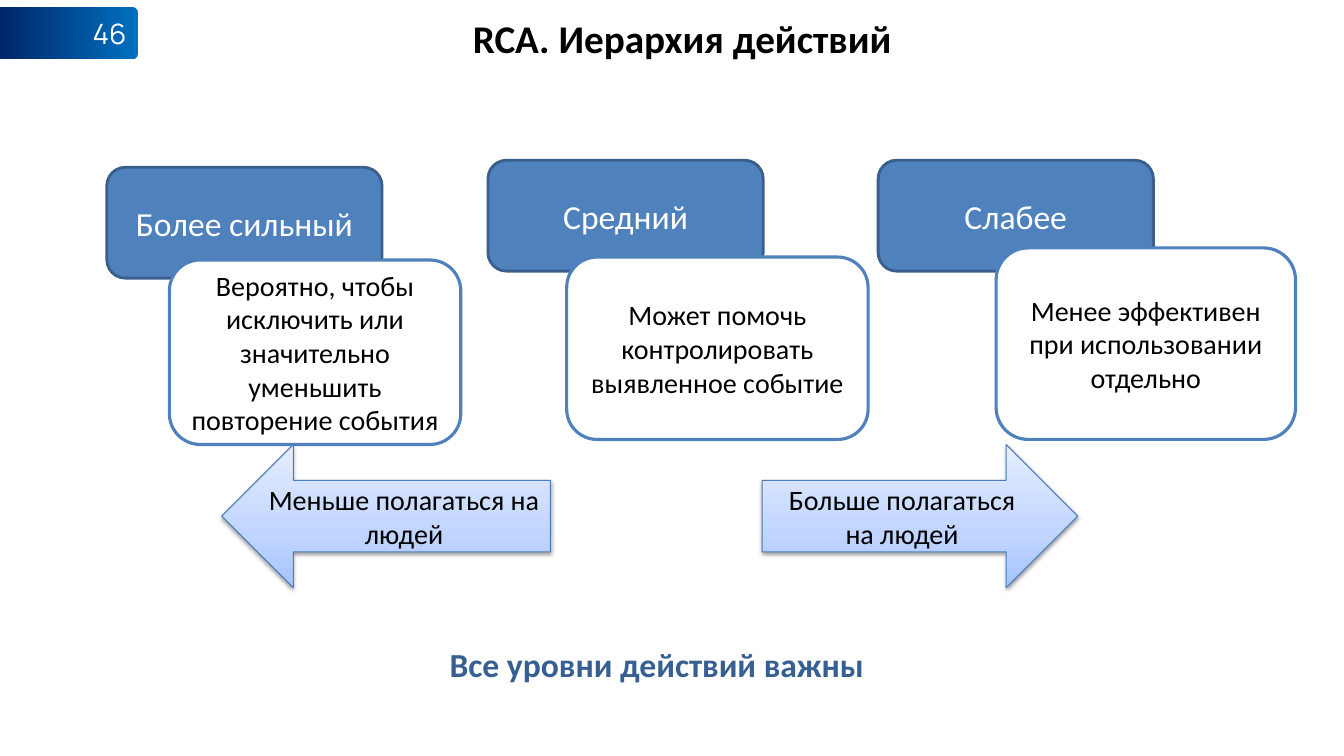
from dataclasses import dataclass

from lxml import etree
from pptx import Presentation
from pptx.dml.color import RGBColor
from pptx.enum import shapes, text
from pptx.oxml import ns
from pptx.util import Inches, Pt

MSO = shapes.MSO_SHAPE
ALIGN = text.PP_ALIGN
ARROW_STOPS = ((0, "A4C4FF"), (35, "BFD4FF"), (100, "E6EEFF"))
BADGE_STOPS = ((0, "0070C0"), (100, "002060"))


@dataclass
class Box:
    left: float
    top: float
    width: float
    height: float
    label: str


@dataclass
class Style:
    size: int
    color: str
    fill: str = ""
    line: str = ""
    line_width: float = 0
    stops: tuple = ()
    angle: int = 0  # clockwise degrees
    shadow: bool = False
    align: ALIGN = ALIGN.CENTER
    font: str = "Calibri"
    bold: bool = False


HEADER = Style(24, "FFFFFF", fill="4F81BD", line="3A5F8C", line_width=2)
DETAIL = Style(20, "000000", fill="FFFFFF", line="4F81BD", line_width=2.25)
ARROW = Style(20, "000000", line="4B7EBC", line_width=0.75,
              stops=ARROW_STOPS, angle=270, shadow=True)
BADGE = Style(20, "FFFFFF", stops=BADGE_STOPS, angle=180,
              align=ALIGN.RIGHT, font="Manrope")
TITLE = Style(28, "000000", bold=True)
SUMMARY = Style(24, "376092", align=ALIGN.LEFT, bold=True)

HEADERS = [
    Box(1.06, 1.66, 2.73, 1.1, "Более сильный"),
    Box(4.84, 1.59, 2.73, 1.1, "Средний"),
    Box(8.71, 1.59, 2.73, 1.1, "Слабее"),
]
DETAILS = [
    Box(1.68, 2.58, 2.89, 1.83,
        "Вероятно, чтобы исключить или значительно уменьшить повторение события"),
    Box(5.62, 2.55, 2.99, 1.81, "Может помочь контролировать выявленное событие"),
    Box(9.88, 2.46, 2.97, 1.9, "Менее эффективен при использовании отдельно"),
]
LESS_RELIANCE = Box(2.2, 4.41, 3.26, 1.42, "Меньше полагаться на людей")
MORE_RELIANCE = Box(7.56, 4.41, 3.13, 1.42, "Больше полагаться на людей")


def rgb(value: str) -> RGBColor:
    return RGBColor.from_string(value)


def frame(box: Box) -> tuple:
    return tuple(Inches(v) for v in (box.left, box.top, box.width, box.height))


def write(sp, label: str, style: Style) -> None:
    tf = sp.text_frame
    tf.text = label
    tf.vertical_anchor = text.MSO_ANCHOR.MIDDLE
    p = tf.paragraphs[0]
    p.alignment = style.align
    font = p.runs[0].font
    font.name, font.size, font.bold = style.font, Pt(style.size), style.bold
    font.color.rgb = rgb(style.color)


def fill_gradient(sp, stops: tuple, angle: int) -> None:
    sp.fill.gradient()
    sp.fill.gradient_angle = (360 - angle) % 360
    gs_list = sp._element.spPr.find(".//" + ns.qn("a:gsLst"))
    for gs in list(gs_list):
        gs_list.remove(gs)
    for percent, color in stops:
        gs = etree.SubElement(gs_list, ns.qn("a:gs"), pos=str(percent * 1000))
        etree.SubElement(gs, ns.qn("a:srgbClr"), val=color)


def add_shadow(sp) -> None:
    effects = sp._element.spPr.find(ns.qn("a:effectLst"))
    outer = etree.SubElement(effects, ns.qn("a:outerShdw"), blurRad=str(Pt(3.1)),
                             dist=str(Pt(1.6)), dir="5400000", rotWithShape="0")
    color = etree.SubElement(outer, ns.qn("a:srgbClr"), val="000000")
    etree.SubElement(color, ns.qn("a:alpha"), val="38000")


def add_box(s, kind: MSO, box: Box, style: Style):
    sp = s.shapes.add_shape(kind, *frame(box))
    sp.shadow.inherit = False
    if style.stops:
        fill_gradient(sp, style.stops, style.angle)
    else:
        sp.fill.solid()
        sp.fill.fore_color.rgb = rgb(style.fill)
    if style.line:
        sp.line.color.rgb = rgb(style.line)
        sp.line.width = Pt(style.line_width)
    else:
        sp.line.fill.background()
    if style.shadow:
        add_shadow(sp)
    write(sp, box.label, style)
    return sp


def main() -> None:
    prs = Presentation()
    prs.slide_width, prs.slide_height = Inches(13.33), Inches(7.5)
    s = prs.slides.add_slide(prs.slide_layouts[5])

    # Title
    title = s.shapes.title
    title.left, title.top, title.width, title.height = frame(Box(3.27, 0.16, 6.99, 0.44, ""))
    write(title, "RCA. Иерархия действий", TITLE)

    # Conclusion
    summary = s.shapes.add_textbox(*frame(Box(4.36, 6.34, 4.35, 0.5, "")))
    write(summary, "Все уровни действий важны", SUMMARY)
    summary.text_frame.word_wrap = False
    summary.text_frame.auto_size = text.MSO_AUTO_SIZE.SHAPE_TO_FIT_TEXT

    # Action levels, with descriptions in front
    for boxes, style in ((HEADERS, HEADER), (DETAILS, DETAIL)):
        for box in boxes:
            add_box(s, MSO.ROUNDED_RECTANGLE, box, style)

    # Reliance on people
    add_box(s, MSO.LEFT_ARROW, LESS_RELIANCE, ARROW)
    add_box(s, MSO.RIGHT_ARROW, MORE_RELIANCE, ARROW)

    # Page number
    badge = add_box(s, MSO.ROUNDED_RECTANGLE, Box(-0.1, 0.07, 1.47, 0.52, "46"), BADGE)
    badge.adjustments[0] = 0.11

    prs.save("out.pptx")


if __name__ == "__main__":
    main()
